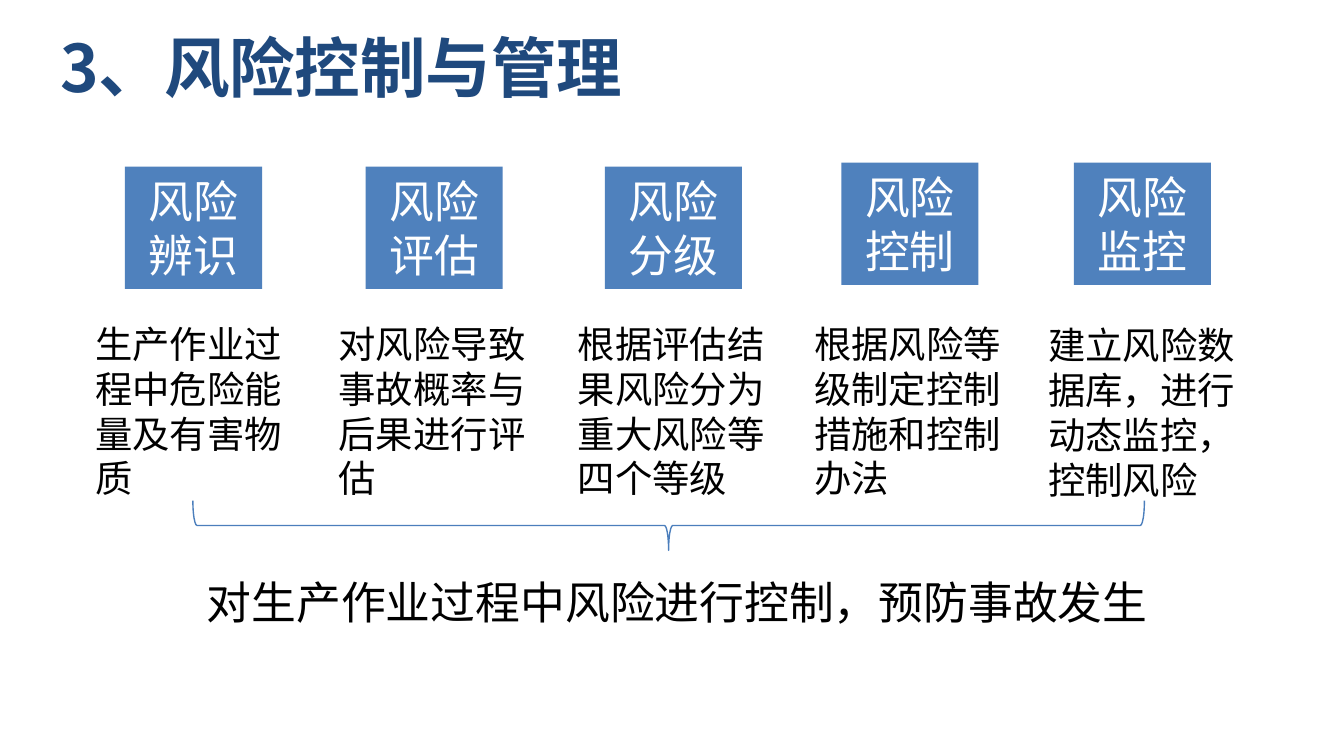
"""Build a slide showing five stages of risk control and their shared aim."""
from pptx import Presentation
from pptx.dml.color import RGBColor
from pptx.enum.shapes import MSO_SHAPE
from pptx.enum.text import MSO_ANCHOR, PP_ALIGN
from pptx.oxml.ns import qn
from pptx.util import Inches, Pt

FONT = "Noto Sans CJK SC"
WIDTH = 10
COLORS = {
    "title": "1F497D",
    "box": "4F81BD",
    "brace": "4B7EBC",
    "light": "FFFFFF",
    "dark": "000000",
}
TITLE = "3、风险控制与管理"
AIM = "对生产作业过程中风险进行控制，预防事故发生"
STAGES = [
    ("风险辨识", (0.93, 1.24), "生产作业过程中危险能量及有害物质", (0.61, 2.34, 1.67)),
    ("风险评估", (2.72, 1.24), "对风险导致事故概率与后果进行评估", (2.42, 2.34, 1.61)),
    ("风险分级", (4.5, 1.24), "根据评估结果风险分为重大风险等四个等级", (4.2, 2.34, 1.61)),
    ("风险控制", (6.26, 1.21), "根据风险等级制定控制措施和控制办法", (5.96, 2.34, 1.61)),
    ("风险监控", (7.99, 1.21), "建立风险数据库，进行动态监控，控制风险", (7.7, 2.35, 1.61)),
]
BOX = (1.02, 0.91)
NOTE = (1.45,)


def color(name):
    return RGBColor.from_string(COLORS[name])


def add_text(slide, text, place, size=20, ink="dark", fill=None, bold=False,
             align=PP_ALIGN.LEFT, anchor=MSO_ANCHOR.TOP, lead=1.2):
    area = [Inches(n) for n in place]
    if fill:
        shape = slide.shapes.add_shape(MSO_SHAPE.RECTANGLE, *area)
        shape.shadow.inherit = False
        shape.fill.solid()
        shape.fill.fore_color.rgb = color(fill)
        shape.line.fill.background()
    else:
        shape = slide.shapes.add_textbox(*area)
    frame = shape.text_frame
    frame.word_wrap = True
    frame.vertical_anchor = anchor
    para = frame.paragraphs[0]
    para.alignment = align
    if lead:
        para.line_spacing = Pt(size * lead)
    run = para.add_run()
    run.text = text
    font = run.font
    font.name = FONT
    font.size = Pt(size)
    font.bold = bold
    font.color.rgb = color(ink)
    east = run._r.get_or_add_rPr().makeelement(qn("a:ea"), {"typeface": FONT})
    run._r.rPr.find(qn("a:latin")).addnext(east)


def add_brace(slide, place):
    area = [Inches(n) for n in place]
    brace = slide.shapes.add_shape(MSO_SHAPE.LEFT_BRACE, *area)
    brace.rotation = 270
    brace.shadow.inherit = False
    brace.fill.background()
    brace.line.color.rgb = color("brace")
    brace.line.width = Pt(0.75)


def main():
    deck = Presentation()
    deck.slide_width = Inches(WIDTH)
    deck.slide_height = Inches(WIDTH * 9 / 16)
    slide = deck.slides.add_slide(deck.slide_layouts[6])
    add_text(slide, TITLE, (0.35, 0.14, 9, 0.7), size=35.1, ink="title",
             bold=True, anchor=MSO_ANCHOR.MIDDLE, lead=None)
    for name, spot, note, below in STAGES:
        add_text(slide, name, spot + BOX, size=24, ink="light", fill="box",
                 align=PP_ALIGN.CENTER, anchor=MSO_ANCHOR.MIDDLE)
        add_text(slide, note, below + NOTE)
    add_brace(slide, (4.79, 0.37, 0.37, 7.08))
    add_text(slide, AIM, (1.44, 4.23, 7.48, 0.5), size=24)
    deck.save("out.pptx")


if __name__ == "__main__":
    main()
